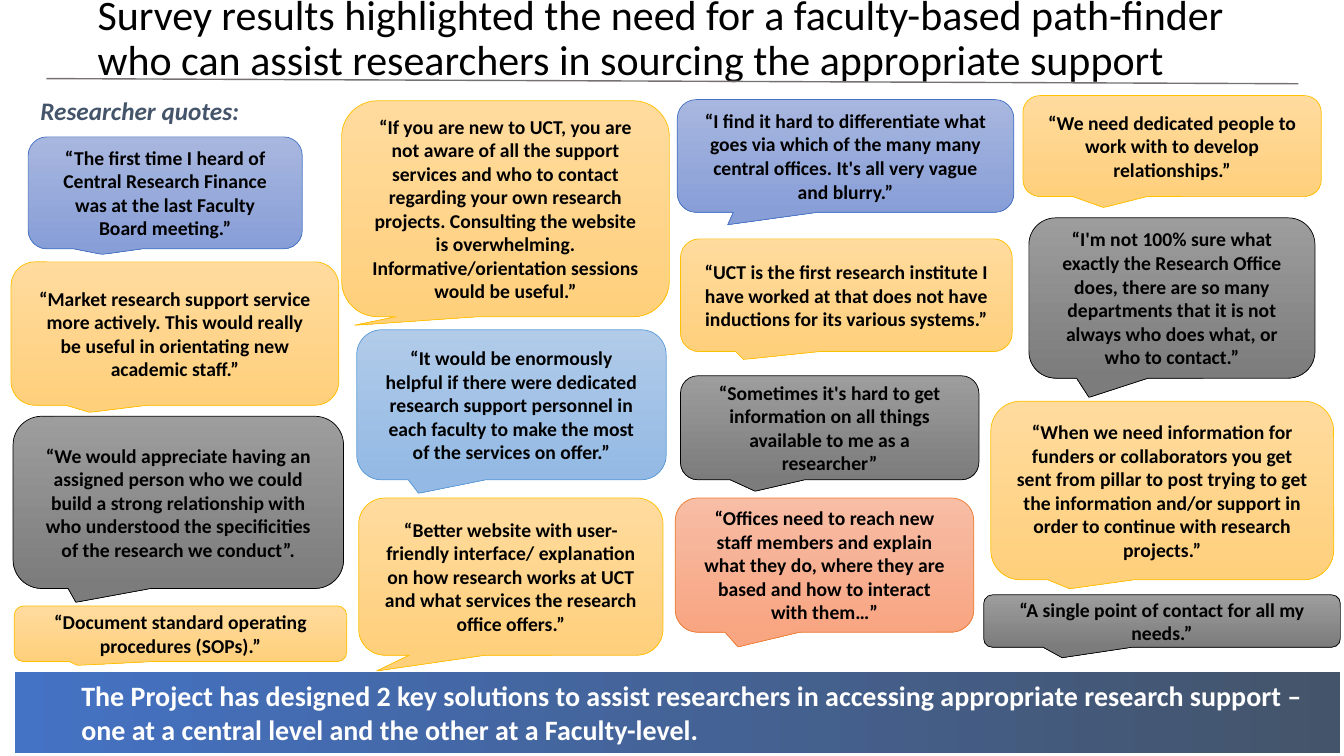
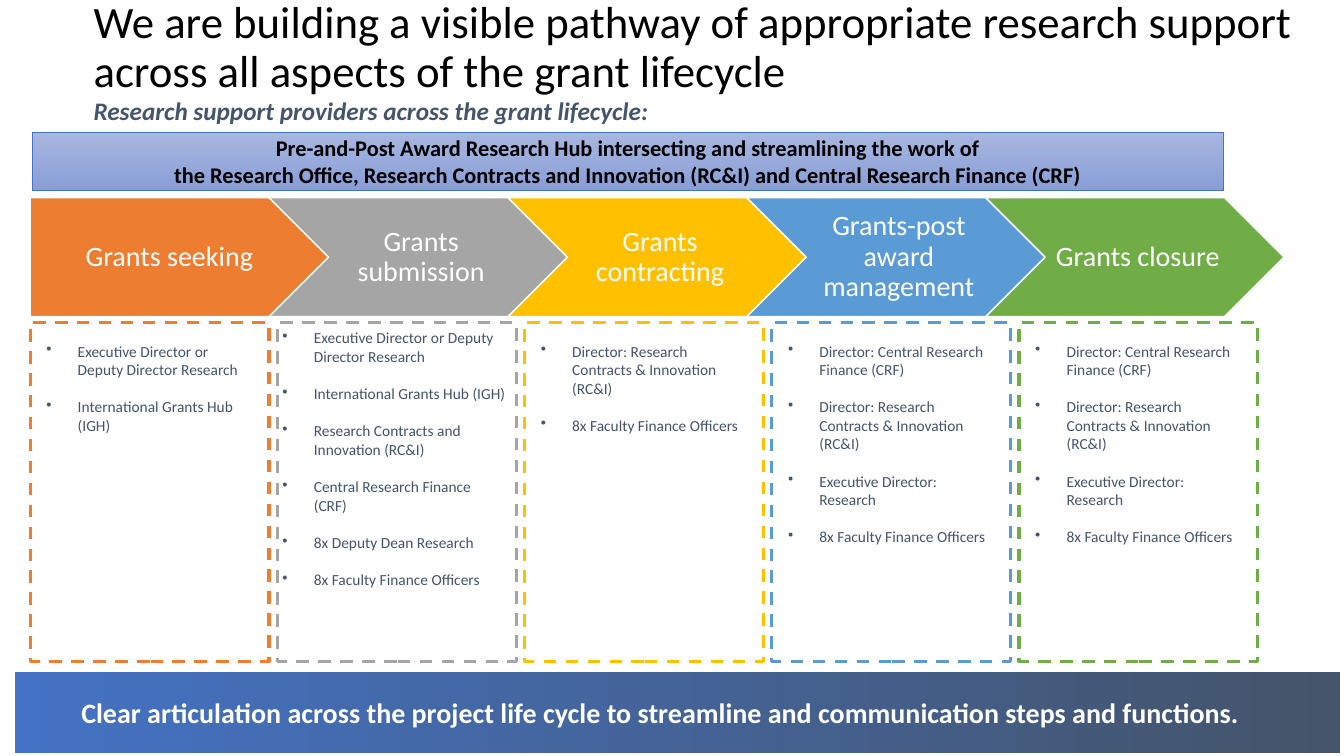
import pptx
from dataclasses import dataclass
from lxml import etree
from pptx.dml.color import RGBColor
from pptx.enum.dml import MSO_LINE
from pptx.enum.shapes import MSO_CONNECTOR, MSO_SHAPE
from pptx.enum.text import MSO_ANCHOR, PP_ALIGN
from pptx.oxml.ns import qn
from pptx.util import Cm, Pt


@dataclass(frozen=True)
class Theme:
    font: str = "Calibri"
    black: str = "000000"
    white: str = "FFFFFF"
    slate: str = "44546A"
    rule: str = "767171"
    banner: tuple = ("4472C4", "44546A")
    subtitle_size: int = 18
    banner_size: int = 20
    quote_size: int = 14
    hub_size: int = 16
    stage_size: int = 20
    list_size: int = 11


THEME = Theme()

# Top colour, bottom colour, outline
TINTS = {
    "blue": ("A8B7DF", "889ED7", "4472C4"),
    "gold": ("FFDB9E", "FFD07C", "FFC000"),
    "grey": ("9D9D9D", "7C7C7C", "000000"),
    "sky": ("B1CBE9", "93B9E4", "5B9BD5"),
    "coral": ("F7BDA5", "F8A582", "ED7D31"),
}

# Tint, (left, top, width, height) in cm, tail offset as a share of the size, quote
QUOTES = [
    ("blue", (0.71, 3.45, 6.91, 2.82), (-0.23, 0.55),
     "“The first time I heard of Central Research Finance was at the last Faculty Board meeting.”"),
    ("gold", (0.28, 6.6, 8.26, 3.61), (-0.26, 0.55),
     "“Market research support service more actively. This would really be useful in orientating "
     "new academic staff.”"),
    ("grey", (0.33, 10.49, 8.33, 4.34), (-0.31, 0.58),
     "“We would appreciate having an assigned person who we could build a strong relationship with "
     "who understood the specificities of the research we conduct”."),
    ("gold", (0.36, 15.27, 8.38, 1.4), (-0.31, 0.57),
     "“Document standard operating procedures (SOPs).”"),
    ("gold", (8.61, 2.54, 8.26, 5.44), (-0.46, 0.54),
     "“If you are new to UCT, you are not aware of all the support services and who to contact "
     "regarding your own research projects. Consulting the website is overwhelming. "
     "Informative/orientation sessions would be useful.”"),
    ("sky", (8.99, 8.31, 7.8, 3.78), (-0.3, 0.59),
     "“It would be enormously helpful if there were dedicated research support personnel in each "
     "faculty to make the most of the services on offer.”"),
    ("gold", (9.04, 12.55, 7.67, 3.96), (-0.44, 0.6),
     "“Better website with user-friendly interface/ explanation on how research works at UCT and "
     "what services the research office offers.”"),
    ("blue", (17.07, 2.51, 8.48, 2.84), (-0.35, 0.61),
     "“I find it hard to differentiate what goes via which of the many many central offices. "
     "It's all very vague and blurry.”"),
    ("gold", (17.15, 6.02, 8.36, 2.84), (-0.31, 0.57),
     "“UCT is the first research institute I have worked at that does not have inductions for its "
     "various systems.”"),
    ("grey", (17.15, 9.47, 7.52, 2.62), (-0.25, 0.61),
     "“Sometimes it's hard to get information on all things available to me as a researcher”"),
    ("coral", (17.02, 12.55, 7.52, 3.38), (-0.29, 0.61),
     "“Offices need to reach new staff members and explain what they do, where they are based and "
     "how to interact with them…”"),
    ("gold", (25.78, 2.41, 7.52, 2.54), (-0.23, 0.61),
     "“We need dedicated people to work with to develop relationships.”"),
    ("grey", (25.93, 5.49, 7.21, 4.04), (-0.29, 0.62),
     "“I'm not 100% sure what exactly the Research Office does, there are so many departments that "
     "it is not always who does what, or who to contact.”"),
    ("gold", (24.97, 10.11, 8.64, 4.5), (-0.27, 0.55),
     "“When we need information for funders or collaborators you get sent from pillar to post "
     "trying to get the information and/or support in order to continue with research projects.”"),
    ("grey", (24.79, 14.99, 8.99, 1.32), (-0.28, 0.7),
     "“A single point of contact for all my needs.”"),
]

HUB = [
    "Pre-and-Post Award Research Hub intersecting and streamlining the work of",
    "the Research Office, Research Contracts and Innovation (RC&I) and Central Research Finance (CRF)",
]

DIRECTOR = "Executive Director or Deputy Director Research"
GRANTS_HUB = "International Grants Hub (IGH)"
CONTRACTS = "Director: Research Contracts & Innovation (RC&I)"
OFFICERS = "8x Faculty Finance Officers"
POST_AWARD = ["Director: Central Research Finance (CRF)", CONTRACTS,
              "Executive Director: Research", OFFICERS]

ROOMY = (0.41, 0.48, 0.46, 0)
TIGHT = (0.13, 0.15, 0.25, 0)

# Stage, colour, list margins in cm, support providers
STAGES = [
    ("Grants seeking", "ED7D31", ROOMY, [DIRECTOR, GRANTS_HUB]),
    ("Grants submission", "A5A5A5", TIGHT,
     [DIRECTOR, GRANTS_HUB, "Research Contracts and Innovation (RC&I)",
      "Central Research Finance (CRF)", "8x Deputy Dean Research", OFFICERS]),
    ("Grants contracting", "FFC000", ROOMY, [CONTRACTS, OFFICERS]),
    ("Grants-post award management", "5B9BD5", ROOMY, POST_AWARD),
    ("Grants closure", "70AD47", ROOMY, POST_AWARD),
]


def rgb(value):
    return RGBColor.from_string(value)


def write(tf, paragraphs, size, color, margins=(0, 0, 0, 0), bold=False, italic=False,
          align=PP_ALIGN.LEFT, anchor=MSO_ANCHOR.TOP, spacing=None, gap=0, bullet_indent=None):
    """Fill a text frame; margins are left, top, right, bottom in cm, and \\n breaks a line."""
    tf.word_wrap = True
    tf.vertical_anchor = anchor
    tf.margin_left, tf.margin_top, tf.margin_right, tf.margin_bottom = map(Cm, margins)
    for i, text in enumerate(paragraphs):
        p = tf.add_paragraph() if i else tf.paragraphs[0]
        p.alignment = align
        if spacing:
            p.line_spacing = spacing
        if i and gap:
            p.space_before = Pt(gap)
        if bullet_indent:
            pPr = p._p.get_or_add_pPr()
            pPr.set("marL", str(Cm(bullet_indent)))
            pPr.set("indent", str(-Cm(bullet_indent)))
            etree.SubElement(pPr, qn("a:buChar"), char="•")
        for j, line in enumerate(text.split("\n")):
            if j:
                p.add_line_break()
            r = p.add_run()
            r.text = line
            r.font.name, r.font.size = THEME.font, Pt(size)
            r.font.bold, r.font.italic = bold, italic
            r.font.color.rgb = rgb(color)


def add_shape(s, kind, box, fill, line=None, line_width=0.5, angle=270):
    """Add a preset shape; a fill given as a pair of colours becomes a gradient."""
    sp = s.shapes.add_shape(kind, *map(Cm, box))
    sp.shadow.inherit = False
    if isinstance(fill, tuple):
        sp.fill.gradient()
        sp.fill.gradient_angle = angle
        for stop, color in zip(sp.fill.gradient_stops, fill):
            stop.color.rgb = rgb(color)
    else:
        sp.fill.solid()
        sp.fill.fore_color.rgb = rgb(fill)
    if line:
        sp.line.color.rgb = rgb(line)
        sp.line.width = Pt(line_width)
    else:
        sp.line.fill.background()
    return sp


def add_textbox(s, box, *args, **kwargs):
    write(s.shapes.add_textbox(*map(Cm, box)).text_frame, *args, **kwargs)


def add_tinted(s, kind, box, tint, paragraphs, size):
    """Add an outlined gradient shape with bold centred text."""
    top, bottom, outline = TINTS[tint]
    sp = add_shape(s, kind, box, (top, bottom), outline)
    write(sp.text_frame, paragraphs, size, THEME.black, (0.41,) * 4, bold=True,
          align=PP_ALIGN.CENTER, anchor=MSO_ANCHOR.MIDDLE)
    return sp


def new_slide(prs, title, title_at, title_size, subtitle, subtitle_left, message):
    """Add a slide with the shared title, subtitle and bottom banner."""
    s = prs.slides.add_slide(prs.slide_layouts[6])
    add_textbox(s, (*title_at, 30.84, 1.4), [title], title_size, THEME.black,
                anchor=MSO_ANCHOR.BOTTOM, spacing=0.9)
    add_textbox(s, (subtitle_left, 2.39, 30.48, 0.84), [subtitle], THEME.subtitle_size,
                THEME.slate, bold=True, italic=True)
    banner = add_shape(s, MSO_SHAPE.RECTANGLE, (0.38, 16.94, 33.38, 2.03), THEME.banner, angle=0)
    write(banner.text_frame, [message], THEME.banner_size, THEME.white, (1.67, 0.3, 0.3, 0.3),
          bold=True, anchor=MSO_ANCHOR.MIDDLE)
    return s


def build_quotes(prs):
    s = new_slide(
        prs,
        "Survey results highlighted the need for a faculty-based path-finder\n"
        "who can assist researchers in sourcing the appropriate support",
        (2.46, 0.74), 30, "Researcher quotes:", 1.02,
        "The Project has designed 2 key solutions to assist researchers in accessing appropriate "
        "research support – one at a central level and the other at a Faculty-level.")
    rule = s.shapes.add_connector(MSO_CONNECTOR.STRAIGHT, Cm(1.17), Cm(1.98), Cm(32.72), Cm(2.11))
    rule.line.color.rgb = rgb(THEME.rule)
    rule.line.width = Pt(1)
    etree.SubElement(rule._element.spPr, qn("a:effectLst"))
    for tint, box, tail, quote in QUOTES:
        sp = add_tinted(s, MSO_SHAPE.ROUNDED_RECTANGULAR_CALLOUT, box, tint, [quote],
                        THEME.quote_size)
        sp.adjustments[0], sp.adjustments[1] = tail


def build_lifecycle(prs):
    s = new_slide(
        prs,
        "We are building a visible pathway of appropriate research support across all aspects of "
        "the grant lifecycle",
        (2.36, 1.04), 32, "Research support providers across the grant lifecycle:", 2.36,
        "Clear articulation across the project life cycle to streamline and communication steps "
        "and functions.")
    add_tinted(s, MSO_SHAPE.RECTANGLE, (0.81, 3.33, 30.02, 1.47), "blue", HUB, THEME.hub_size)

    left, arrow_pitch, arrow_height, panel_pitch = 0.76, 6.02, 3.0, 6.23
    arrow_width = arrow_pitch + arrow_height / 2
    for i, (stage, color, margins, providers) in enumerate(STAGES):
        kind = MSO_SHAPE.CHEVRON if i else MSO_SHAPE.PENTAGON
        arrow = add_shape(s, kind, (left + i * arrow_pitch, 4.98, arrow_width, arrow_height),
                          color, THEME.white, 1)
        arrow.adjustments[0] = 0.5
        write(arrow.text_frame, [stage], THEME.stage_size, THEME.white,
              (0.2 if i else 0.3, 0.15, 0.05, 0.15), align=PP_ALIGN.CENTER,
              anchor=MSO_ANCHOR.MIDDLE, spacing=0.9)

        panel = add_shape(s, MSO_SHAPE.RECTANGLE, (left + i * panel_pitch, 8.13, 6.02, 8.53),
                          THEME.white, color, 2.25)
        panel.line.dash_style = MSO_LINE.DASH
        write(panel.text_frame, providers, THEME.list_size, THEME.slate, margins,
              gap=13.4, bullet_indent=0.79)


def main():
    prs = pptx.Presentation()
    prs.slide_width, prs.slide_height = Cm(33.87), Cm(19.05)
    build_quotes(prs)
    build_lifecycle(prs)
    prs.save("out.pptx")


if __name__ == "__main__":
    main()
